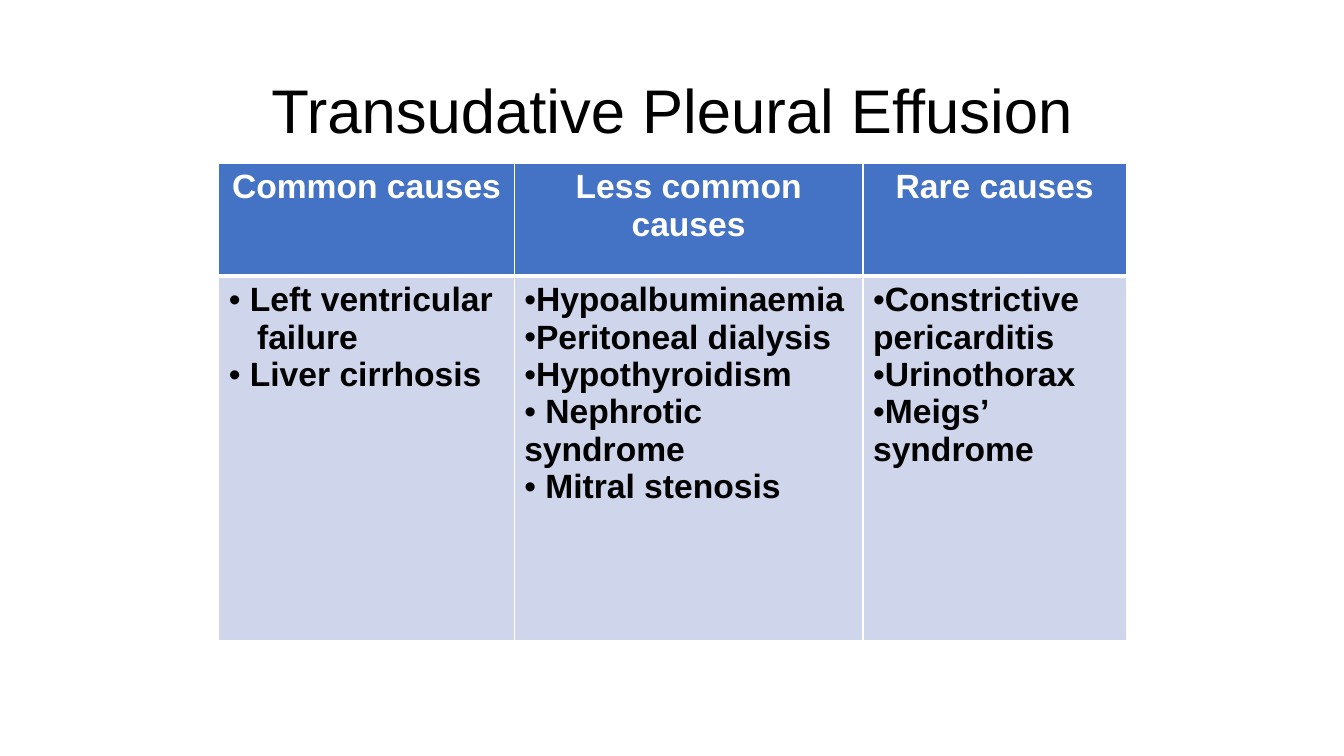
from dataclasses import dataclass

import pptx
import pptx.dml.color
import pptx.enum.text
import pptx.oxml
import pptx.oxml.ns
import pptx.presentation
import pptx.slide
import pptx.table
import pptx.text.text
import pptx.util
from pptx.util import Inches

BLACK = pptx.dml.color.RGBColor(0x00, 0x00, 0x00)
WHITE = pptx.dml.color.RGBColor(0xFF, 0xFF, 0xFF)
HEADER_BLUE = pptx.dml.color.RGBColor(0x44, 0x72, 0xC4)
BODY_BLUE = pptx.dml.color.RGBColor(0xCF, 0xD5, 0xEA)

FONT = "Arial"
CENTER = pptx.enum.text.PP_ALIGN.CENTER
LEFT = pptx.enum.text.PP_ALIGN.LEFT
HEADER_HEIGHT = Inches(1.12)
BODY_HEIGHT = Inches(3.62)


@dataclass(frozen=True)
class Cause:
    text: str
    bullet: bool = True
    indent: float = 0


@dataclass(frozen=True)
class CauseColumn:
    heading: str
    width: float
    causes: tuple[Cause, ...]


COLUMNS = (
    CauseColumn("Common causes", 2.93, (
        Cause(" Left ventricular"),
        Cause("failure", bullet=False, indent=0.28),
        Cause(" Liver cirrhosis"),
    )),
    CauseColumn("Less common causes", 3.46, (
        Cause("Hypoalbuminaemia"),
        Cause("Peritoneal dialysis"),
        Cause("Hypothyroidism"),
        Cause(" Nephrotic syndrome"),
        Cause(" Mitral stenosis"),
    )),
    CauseColumn("Rare causes", 2.61, (
        Cause("Constrictive pericarditis"),
        Cause("Urinothorax"),
        Cause("Meigs’ syndrome"),
    )),
)


def write_text(
    paragraph: pptx.text.text._Paragraph,
    text: str,
    *,
    size: float = 24,
    color: pptx.dml.color.RGBColor = BLACK,
    bold: bool = True,
    align: pptx.enum.text.PP_ALIGN = LEFT,
    bullet: bool = False,
    indent: float = 0,
) -> None:
    run = paragraph.add_run()
    run.text = text
    run.font.name = FONT
    run.font.size = pptx.util.Pt(size)
    run.font.bold = bold
    run.font.color.rgb = color
    paragraph.alignment = align
    properties = paragraph._p.get_or_add_pPr()
    properties.set("marL", str(Inches(indent)))
    properties.set("indent", "0")
    if bullet:
        namespace = pptx.oxml.ns.nsdecls("a")
        properties.append(pptx.oxml.parse_xml(f'<a:buFont {namespace} typeface="{FONT}"/>'))
        properties.append(pptx.oxml.parse_xml(f'<a:buChar {namespace} char="•"/>'))


def style_cell(
    cell: pptx.table._Cell, fill: pptx.dml.color.RGBColor, bottom_width: float = 1
) -> None:
    """Fill the cell and give it white borders."""
    properties = cell._tc.get_or_add_tcPr()
    widths = {"lnL": 1, "lnR": 1, "lnT": 1, "lnB": bottom_width}
    for tag, width in widths.items():
        properties.append(pptx.oxml.parse_xml(
            f'<a:{tag} {pptx.oxml.ns.nsdecls("a")} w="{pptx.util.Pt(width)}">'
            f'<a:solidFill><a:srgbClr val="{WHITE}"/></a:solidFill></a:{tag}>'
        ))
    cell.fill.solid()
    cell.fill.fore_color.rgb = fill


def add_title(slide: pptx.slide.Slide, text: str) -> None:
    shape = slide.shapes.add_textbox(Inches(0.92), Inches(0.4), Inches(11.5), Inches(1.45))
    shape.text_frame.word_wrap = True
    shape.text_frame.vertical_anchor = pptx.enum.text.MSO_ANCHOR.MIDDLE
    paragraph = shape.text_frame.paragraphs[0]
    paragraph.line_spacing = 0.9
    write_text(paragraph, text, size=44, bold=False, align=CENTER)


def add_causes_table(slide: pptx.slide.Slide, columns: tuple[CauseColumn, ...]) -> None:
    width = Inches(sum(column.width for column in columns))
    table = slide.shapes.add_table(
        2, len(columns), Inches(2.17), Inches(1.62), width, HEADER_HEIGHT + BODY_HEIGHT
    ).table
    table.rows[0].height = HEADER_HEIGHT
    table.rows[1].height = BODY_HEIGHT
    for index, column in enumerate(columns):
        table.columns[index].width = Inches(column.width)

        header = table.cell(0, index)
        style_cell(header, HEADER_BLUE, bottom_width=3)
        write_text(
            header.text_frame.paragraphs[0], column.heading, color=WHITE, align=CENTER
        )

        body = table.cell(1, index)
        style_cell(body, BODY_BLUE)
        frame = body.text_frame
        for position, cause in enumerate(column.causes):
            paragraph = frame.add_paragraph() if position else frame.paragraphs[0]
            write_text(paragraph, cause.text, bullet=cause.bullet, indent=cause.indent)


def main() -> None:
    presentation = pptx.Presentation()
    presentation.slide_width = Inches(13.33)
    presentation.slide_height = Inches(7.5)
    slide = presentation.slides.add_slide(presentation.slide_layouts[6])
    add_title(slide, "Transudative Pleural Effusion")
    add_causes_table(slide, COLUMNS)
    presentation.save("out.pptx")


if __name__ == "__main__":
    main()
